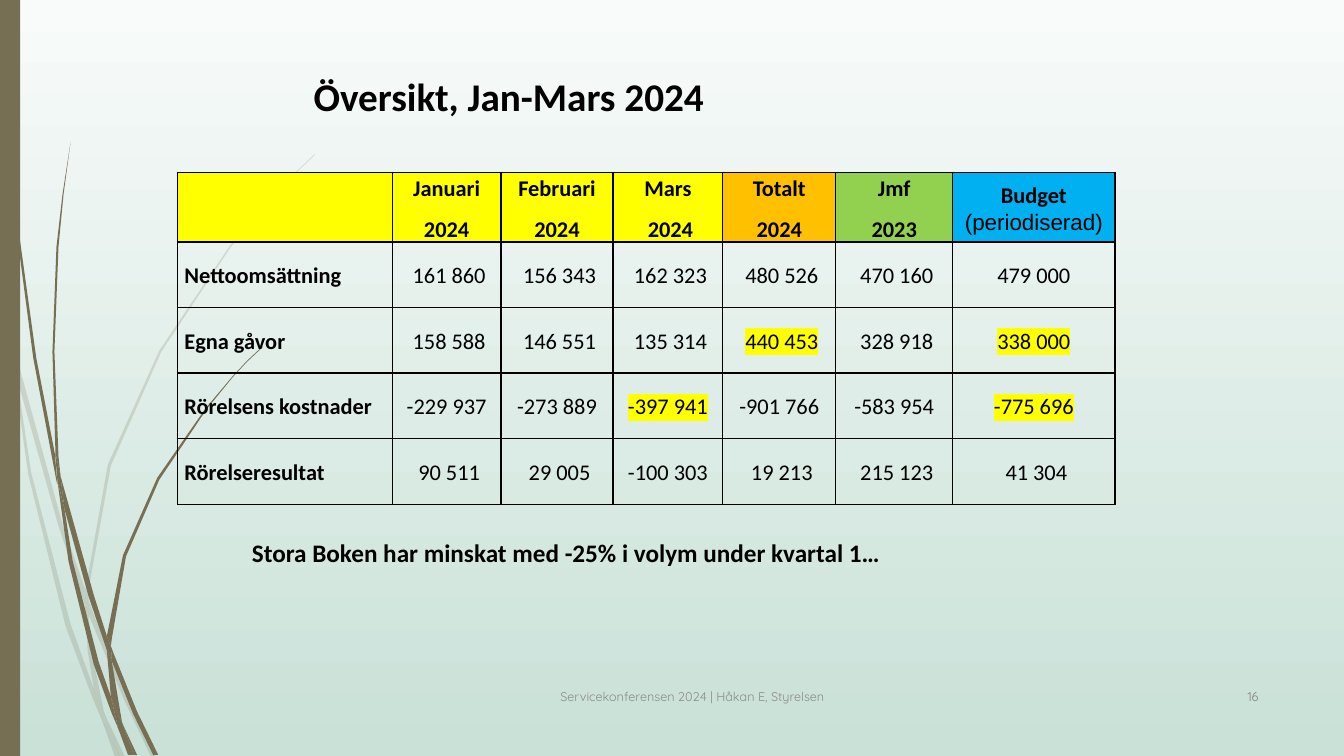
import pptx
import pptx.dml.color
import pptx.enum.shapes
import pptx.enum.text
import pptx.oxml.ns
import pptx.util
from lxml import etree

PX = 9144  # one hundredth of an inch
COLORS = {
    "sky": "F8FBFA", "mist": "C9E1D7", "grass": "766F54", "ink": "000000",
    "footer": "8C8C8C", "number": "808080", "yellow": "FFFF00",
    "orange": "FFC000", "green": "92D050", "blue": "00B0F0",
}
ALIGN = pptx.enum.text.PP_ALIGN
MIDDLE = pptx.enum.text.MSO_ANCHOR.MIDDLE
TOP = pptx.enum.text.MSO_ANCHOR.TOP

PALE_BLADES = [
    [(11, 350), (9, 322), (0, 282), (0, 299), (10, 344)],
    [(58, 522), (84, 599), (85, 586), (62, 520), (14, 345), (17, 376)],
    [(92, 607), (88, 596), (88, 610), (123, 694), (150, 751), (155, 751), (127, 692)],
    [(119, 751), (124, 751), (105, 711)],
    [(93, 683), (70, 619), (31, 469), (17, 376), (11, 350), (28, 470), (65, 621),
     (92, 693), (101, 714), (99, 707)],
    [(84, 599), (87, 646), (93, 683), (96, 692), (105, 711), (103, 706), (91, 646),
     (88, 610), (88, 608)],
    [(88, 584), (110, 462), (160, 349), (229, 245), (268, 198), (290, 175), (312, 154),
     (312, 153), (289, 175), (268, 197), (228, 244), (158, 348), (107, 461), (85, 584),
     (85, 586), (88, 596)],
    [(101, 714), (114, 751), (119, 751)],
    [(88, 608), (88, 610), (88, 596), (85, 586), (84, 599)],
    [(96, 692), (93, 683), (99, 707), (101, 714), (119, 751), (105, 711)],
]
DARK_BLADES = [
    [(7, 110), (17, 233), (33, 355), (56, 477), (57, 481), (55, 457), (55, 453), (36, 355),
     (19, 232), (8, 109), (5, 48), (4, 0), (3, 0), (4, 48)],
    [(88, 592), (106, 645), (106, 633), (106, 631), (93, 590), (60, 472), (64, 505)],
    [(113, 649), (110, 641), (111, 656), (132, 708), (152, 749), (157, 749), (136, 706)],
    [(110, 691), (98, 657), (72, 556), (64, 505), (57, 477), (68, 557), (93, 659),
     (111, 708), (117, 722), (116, 717)],
    [(60, 472), (58, 453), (54, 349), (58, 245), (63, 193), (70, 141), (62, 193),
     (56, 245), (52, 349), (55, 449)],
    [(133, 749), (136, 749), (122, 719)],
    [(57, 477), (64, 505), (60, 472), (55, 449), (55, 453)],
    [(111, 633), (125, 552), (158, 476), (205, 406), (231, 374), (245, 359), (261, 344),
     (260, 344), (245, 358), (231, 373), (204, 405), (156, 474), (122, 551), (106, 631),
     (110, 641)],
    [(117, 722), (127, 749), (131, 749)],
    [(106, 645), (110, 691), (116, 706), (122, 719), (121, 716), (111, 656), (109, 651)],
    [(106, 645), (109, 651), (111, 656), (110, 641), (106, 631), (106, 633)],
    [(116, 706), (110, 691), (116, 717), (117, 722), (130, 749), (133, 749), (122, 719)],
]

COLUMN_WIDTHS = [213, 108, 111, 109, 112, 116, 161]
HEADERS = [
    ("", "", "yellow"), ("Januari", "2024", "yellow"), ("Februari", "2024", "yellow"),
    ("Mars", " 2024", "yellow"), ("Totalt", "2024", "orange"), ("Jmf", "2023", "green"),
    ("Budget", "(periodiserad)", "blue"),
]
RESULTS = [
    ("Nettoomsättning", " 161 860", " 156 343", " 162 323", " 480 526", " 470 160", "479 000"),
    ("Egna gåvor", " 158 588", " 146 551", " 135 314", " 440 453", " 328 918", "338 000"),
    ("Rörelsens kostnader", "-229 937", "-273 889", "-397 941", "-901 766", "-583 954", "-775 696"),
    ("Rörelseresultat", " 90 511", " 29 005", "-100 303", " 19 213", " 215 123", " 41 304"),
]
HIGHLIGHTED = {"440 453", "338 000", "-397 941", "-775 696"}


def rgb(color):
    return pptx.dml.color.RGBColor.from_string(COLORS[color])


def set_attributes(target, values):
    for name, value in values.items():
        setattr(target, name, value)


def add_run(para, text, size, color="ink", name="Calibri", bold=False):
    run = para.add_run()
    run.text = text
    set_attributes(run.font, {"size": pptx.util.Pt(size), "name": name, "bold": bold})
    run.font.color.rgb = rgb(color)
    return run


def highlight(run, color):
    fill = run._r.get_or_add_rPr().find(pptx.oxml.ns.qn("a:solidFill"))
    mark = etree.Element(pptx.oxml.ns.qn("a:highlight"))
    etree.SubElement(mark, pptx.oxml.ns.qn("a:srgbClr"), val=COLORS[color])
    fill.addnext(mark)


def set_background(page):
    fill = page.background.fill
    fill.gradient()
    fill.gradient_angle = 270
    for stop, color in zip(fill.gradient_stops, ("sky", "mist")):
        stop.color.rgb = rgb(color)


def paint(shape, color):
    shape.shadow.inherit = False
    shape.fill.solid()
    shape.fill.fore_color.rgb = rgb(color)
    shape.line.fill.background()


def add_blade(page, outline, left, top, opacity):
    points = [((left + x) * PX, (top + y) * PX) for x, y in outline]
    builder = page.shapes.build_freeform(*points[0])
    builder.add_line_segments(points[1:], close=True)
    blade = builder.convert_to_shape()
    paint(blade, "grass")
    if opacity < 100:
        color = blade.fill._xPr.find(".//" + pptx.oxml.ns.qn("a:srgbClr"))
        etree.SubElement(color, pptx.oxml.ns.qn("a:alpha"), val=str(opacity * 1000))


def add_decoration(page, left, top, width, height):
    for blades, opacity in ((PALE_BLADES, 20), (DARK_BLADES, 100)):
        for outline in blades:
            add_blade(page, outline, left, top, opacity)
    bar = page.shapes.add_shape(
        pptx.enum.shapes.MSO_SHAPE.RECTANGLE, left * PX, top * PX, width * PX, height * PX)
    paint(bar, "grass")


def set_title(page, text, left, top, width, height):
    title = page.shapes.title
    set_attributes(title, {"left": left * PX, "top": top * PX,
                           "width": width * PX, "height": height * PX})
    set_attributes(title.text_frame, {"vertical_anchor": TOP, "word_wrap": True})
    para = title.text_frame.paragraphs[0]
    para.alignment = ALIGN.LEFT
    add_run(para, text, 28, bold=True)


def add_label(page, text, left, top, width, height, align, anchor, **font):
    box = page.shapes.add_textbox(left * PX, top * PX, width * PX, height * PX)
    set_attributes(box.text_frame, {"word_wrap": True, "vertical_anchor": anchor})
    para = box.text_frame.paragraphs[0]
    para.alignment = align
    add_run(para, text, **font)


def format_para(para, align=ALIGN.CENTER):
    set_attributes(para, {"alignment": align, "line_spacing": 1.07,
                          "space_after": pptx.util.Pt(8)})
    return para


def format_cell(cell, color=None):
    set_attributes(cell, {"vertical_anchor": MIDDLE, "margin_left": 7 * PX,
                          "margin_right": 7 * PX, "margin_top": PX, "margin_bottom": 0})
    properties = cell._tc.get_or_add_tcPr()
    for side in ("lnL", "lnR", "lnT", "lnB"):
        border = etree.SubElement(properties, pptx.oxml.ns.qn("a:" + side), w="12700")
        fill = etree.SubElement(border, pptx.oxml.ns.qn("a:solidFill"))
        etree.SubElement(fill, pptx.oxml.ns.qn("a:srgbClr"), val=COLORS["ink"])
    if color:
        cell.fill.solid()
        cell.fill.fore_color.rgb = rgb(color)
    else:
        cell.fill.background()


def fill_header(cell, heading, detail, color):
    format_cell(cell, color)
    if not heading:
        return
    para = format_para(cell.text_frame.paragraphs[0])
    add_run(para, heading, 16, bold=True)
    if detail.strip().isdigit():
        add_run(format_para(cell.text_frame.add_paragraph()), detail, 16, bold=True)
    else:
        para.add_line_break()
        add_run(para, detail, 16, name="Arial")


def fill_result(cell, text, is_label):
    format_cell(cell)
    para = format_para(cell.text_frame.paragraphs[0], ALIGN.LEFT if is_label else ALIGN.CENTER)
    value = text.lstrip()
    if value not in HIGHLIGHTED:
        add_run(para, text, 16, bold=is_label)
        return
    if value != text:
        add_run(para, " ", 16)
    highlight(add_run(para, value, 16), "yellow")


def add_results_table(page, left, top, row_height):
    rows = len(RESULTS) + 1
    table = page.shapes.add_table(
        rows, len(COLUMN_WIDTHS), left * PX, top * PX,
        sum(COLUMN_WIDTHS) * PX, rows * row_height * PX).table
    set_attributes(table, {"first_row": False, "horz_banding": False})
    for column, width in zip(table.columns, COLUMN_WIDTHS):
        column.width = width * PX
    for row in table.rows:
        row.height = row_height * PX
    for column, header in enumerate(HEADERS):
        fill_header(table.cell(0, column), *header)
    for row, values in enumerate(RESULTS, start=1):
        for column, text in enumerate(values):
            fill_result(table.cell(row, column), text, column == 0)


def main():
    deck = pptx.Presentation()
    set_attributes(deck, {"slide_width": 1333 * PX, "slide_height": 750 * PX})
    page = deck.slides.add_slide(deck.slide_layouts.get_by_name("Title Only"))
    set_background(page)
    add_decoration(page, 0, 0, 20, 750)
    add_label(page, "Servicekonferensen 2024 | Håkan E, Styrelsen", 302, 671, 769, 40,
              ALIGN.CENTER, MIDDLE, size=9, color="footer", name="Quicksand")
    add_label(page, "16", 1173, 671, 85, 40,
              ALIGN.RIGHT, MIDDLE, size=9, color="number", name="Quicksand")
    set_title(page, "Översikt, Jan-Mars 2024", 301, 67, 468, 104)
    add_results_table(page, 176, 171, 65)
    add_label(page, "Stora Boken har minskat med -25% i volym under kvartal 1…", 240, 528, 816, 40,
              ALIGN.LEFT, TOP, size=18, bold=True)
    deck.save("out.pptx")


if __name__ == "__main__":
    main()
